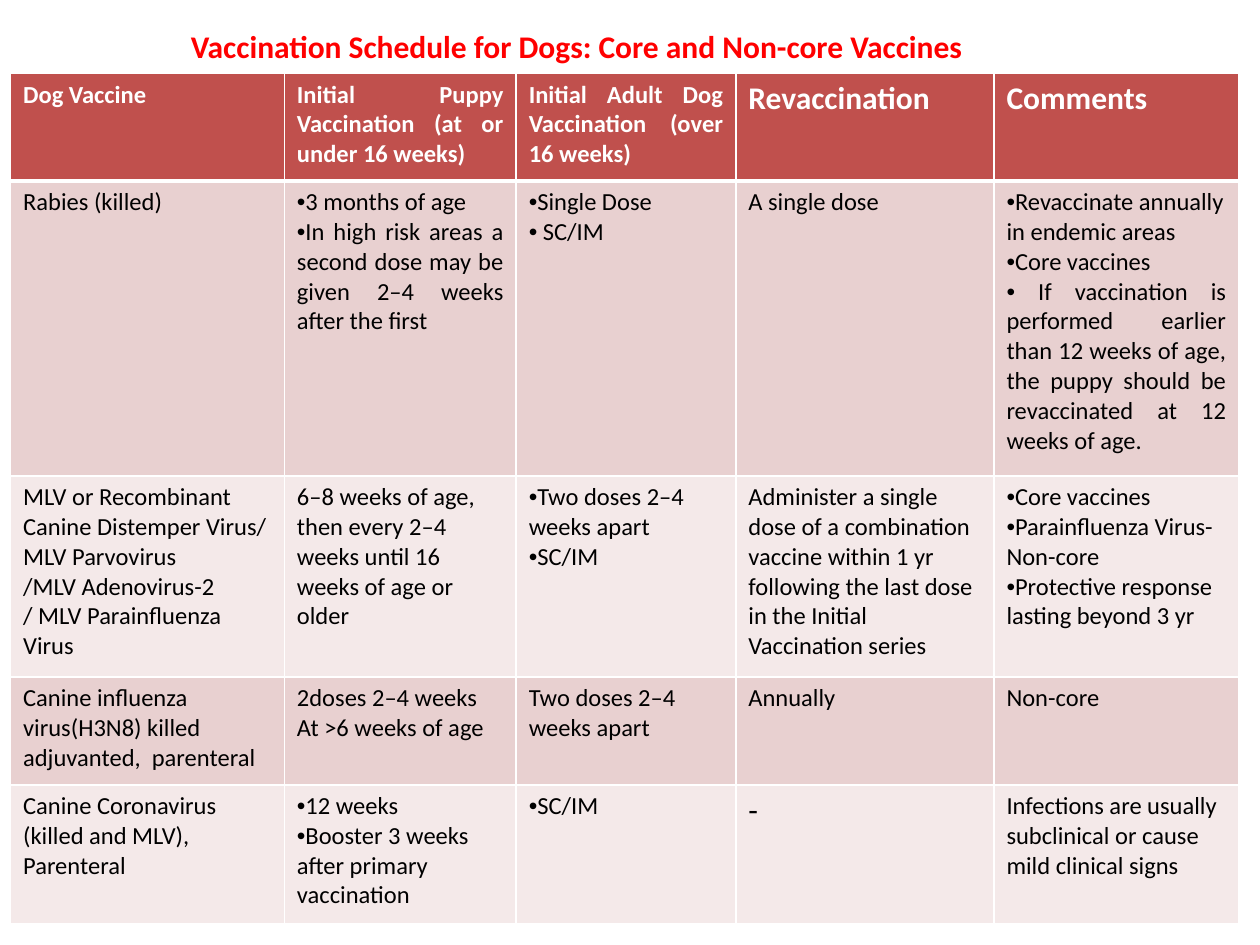
from collections import namedtuple

from lxml.etree import SubElement
from pptx import Presentation
from pptx.dml.color import RGBColor
from pptx.enum.text import PP_ALIGN
from pptx.oxml.ns import qn
from pptx.util import Pt

WHITE = RGBColor(0xFF, 0xFF, 0xFF)
BLACK = RGBColor(0x00, 0x00, 0x00)
RED = RGBColor(0xFF, 0x00, 0x00)
HEADER = RGBColor(0xC0, 0x50, 0x4D)
BANDS = [RGBColor(0xE8, 0xD0, 0xD0), RGBColor(0xF4, 0xE9, 0xE9)]

# A paragraph; plain strings stand for paragraphs with the defaults
Para = namedtuple("Para", "text bullet justify size", defaults=(False, False, 14))


def item(text, justify=False):
    return Para(text, bullet=True, justify=justify)


COL_WIDTHS = [156.5, 132.5, 125.5, 147.5, 140]
ROW_HEIGHTS = [61.5, 168.5, 115, 61.5, 79.5]

HEADINGS = [
    ["Dog Vaccine"],
    [Para("Initial Puppy Vaccination (at or under 16 weeks)", justify=True)],
    [Para("Initial Adult Dog Vaccination (over 16 weeks)", justify=True)],
    [Para("Revaccination", size=18)],
    [Para("Comments", size=18)],
]

VACCINES = [
    [
        ["Rabies (killed)"],
        [item("3 months of age"),
         item("In high risk areas a second dose may be given 2–4 weeks after the first", True)],
        [item("Single Dose"), item(" SC/IM")],
        ["A single dose"],
        [item("Revaccinate annually in endemic areas"),
         item("Core vaccines"),
         item(" If vaccination is performed earlier than 12 weeks of age, "
              "the puppy should be revaccinated at 12 weeks of age.", True)],
    ],
    [
        ["MLV or Recombinant", "Canine Distemper Virus/ MLV Parvovirus",
         "/MLV Adenovirus-2", "/ MLV Parainfluenza", "Virus"],
        ["6–8 weeks of age, then every 2–4 weeks until 16 weeks of age or older"],
        [item("Two doses 2–4 weeks apart"), item("SC/IM")],
        ["Administer a single dose of a combination vaccine within 1 yr "
         "following the last dose in the Initial", "Vaccination series"],
        [item("Core vaccines"), item("Parainfluenza Virus-Non-core"),
         item("Protective response lasting beyond 3 yr")],
    ],
    [
        ["Canine influenza virus(H3N8) killed", "adjuvanted,  parenteral"],
        ["2doses 2–4 weeks", "At >6 weeks of age"],
        ["Two doses 2–4 weeks apart"],
        ["Annually"],
        ["Non-core"],
    ],
    [
        ["Canine Coronavirus (killed and MLV),", "Parenteral"],
        [item("12 weeks"), item("Booster 3 weeks after primary vaccination")],
        [item("SC/IM")],
        [Para("-", size=18)],
        ["Infections are usually", "subclinical or cause mild clinical signs"],
    ],
]


class Deck:
    """Holds the text style and the current slide."""

    font_name = "Calibri"

    def __init__(self, prs):
        self.s = prs.slides.add_slide(prs.slide_layouts[6])

    def add_paras(self, tf, paras, color, bold):
        for i, para in enumerate(paras):
            if isinstance(para, str):
                para = Para(para)
            p = tf.paragraphs[0] if i == 0 else tf.add_paragraph()
            if para.bullet:
                pPr = p._p.get_or_add_pPr()
                SubElement(pPr, qn("a:buFont"), typeface="Arial")
                SubElement(pPr, qn("a:buChar"), char="•")
            p.alignment = PP_ALIGN.JUSTIFY if para.justify else PP_ALIGN.LEFT
            r = p.add_run()
            r.text = para.text
            style = {"name": self.font_name, "size": Pt(para.size), "bold": bold}
            for key, value in style.items():
                setattr(r.font, key, value)
            r.font.color.rgb = color

    def text(self, paras, left, top, width, height, color, bold=False):
        tf = self.s.shapes.add_textbox(Pt(left), Pt(top), Pt(width), Pt(height)).text_frame
        tf.word_wrap = True
        self.add_paras(tf, paras, color, bold)

    def borders(self, cell, widths, color):
        tcPr = cell._tc.get_or_add_tcPr()
        for i, (side, width) in enumerate(widths.items()):
            ln = tcPr.makeelement(qn("a:ln" + side), {"w": str(Pt(width))})
            fill = SubElement(ln, qn("a:solidFill"))
            SubElement(fill, qn("a:srgbClr"), val=str(color))
            tcPr.insert(i, ln)  # borders come before the fill

    def table(self, rows, left, top, col_widths, row_heights):
        frame = self.s.shapes.add_table(
            len(rows), len(col_widths), Pt(left), Pt(top),
            Pt(sum(col_widths)), Pt(sum(row_heights)))
        table = frame.table
        for col, width in zip(table.columns, col_widths):
            col.width = Pt(width)
        for i, (row, height) in enumerate(zip(rows, row_heights)):
            table.rows[i].height = Pt(height)
            head = i == 0
            for j, paras in enumerate(row):
                cell = table.cell(i, j)
                cell.fill.solid()
                cell.fill.fore_color.rgb = HEADER if head else BANDS[(i - 1) % 2]
                # The rule under the header is thicker
                widths = {"L": 1, "R": 1, "T": 3 if i == 1 else 1, "B": 3 if head else 1}
                self.borders(cell, widths, WHITE)
                self.add_paras(cell.text_frame, paras, WHITE if head else BLACK, head)


def main():
    prs = Presentation()
    prs.slide_width, prs.slide_height = Pt(720), Pt(540)
    deck = Deck(prs)

    # Schedule table
    deck.table([HEADINGS] + VACCINES, 6, 42, COL_WIDTHS, ROW_HEIGHTS)

    # Title
    title = Para("Vaccination Schedule for Dogs: Core and Non-core Vaccines", size=18)
    deck.text([title], 102, 12, 534, 29, RED, bold=True)

    prs.save("out.pptx")


if __name__ == "__main__":
    main()
